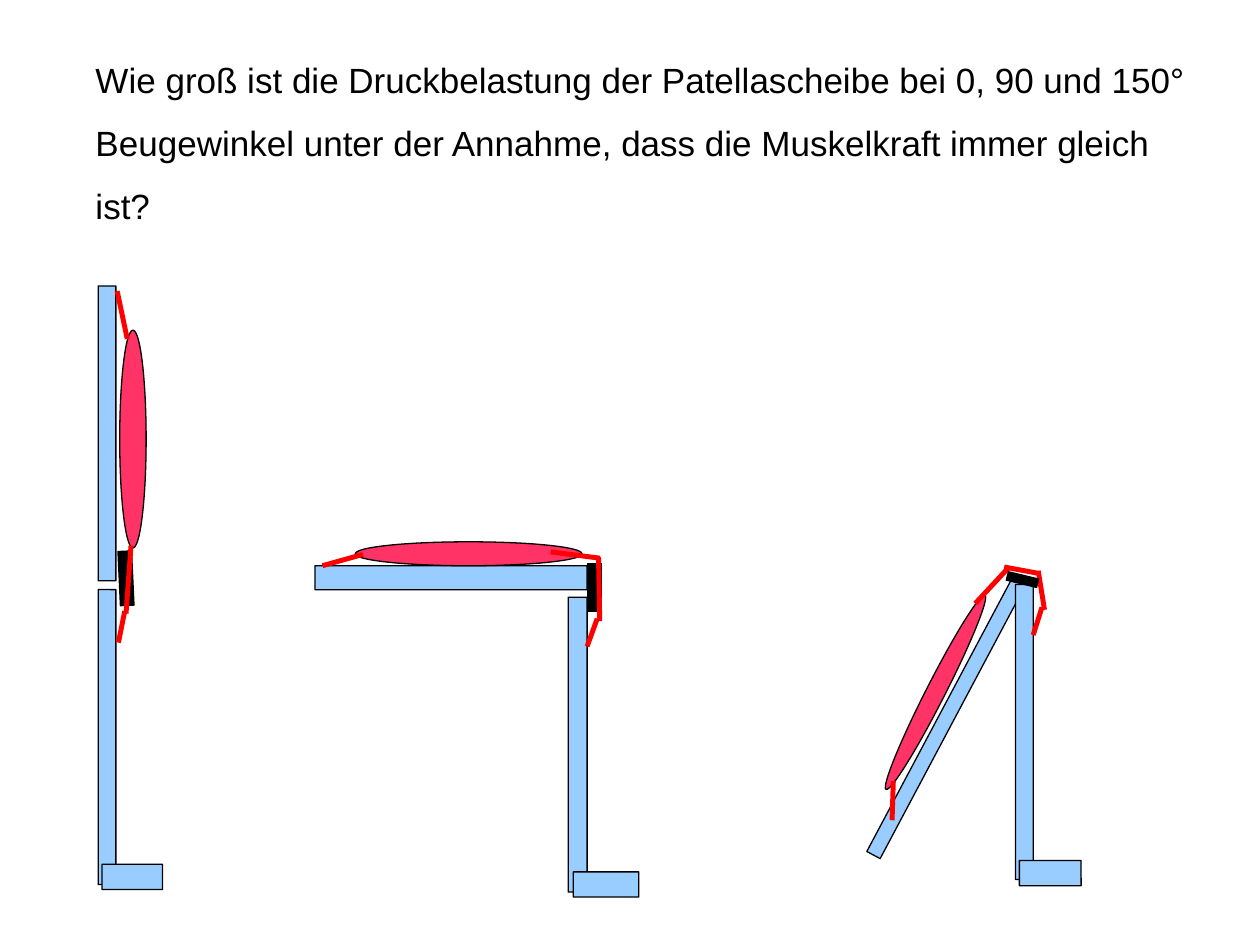
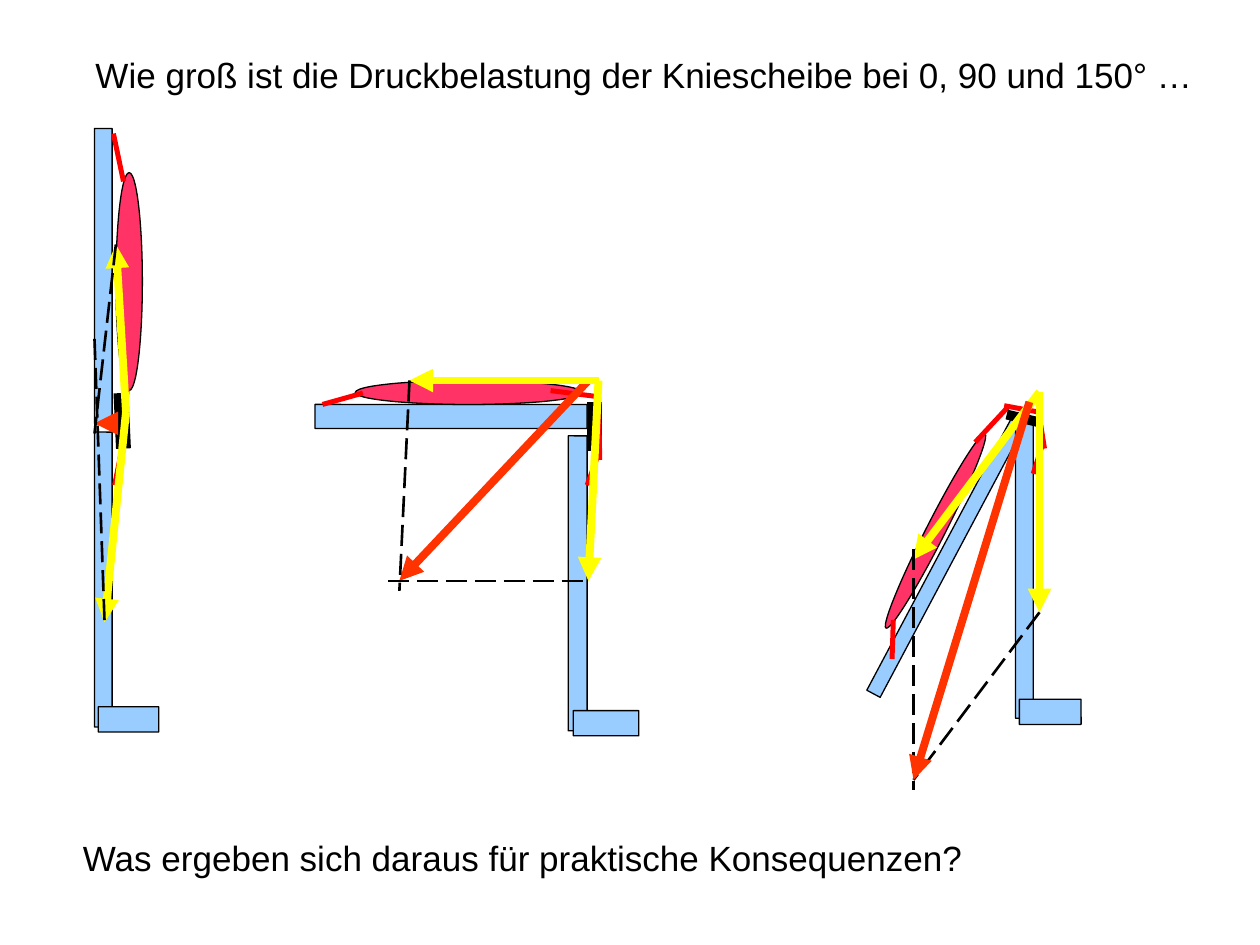
from pptx import Presentation
from pptx.dml.color import RGBColor
from pptx.enum.dml import MSO_LINE
from pptx.enum.shapes import MSO_CONNECTOR, MSO_SHAPE
from pptx.enum.text import MSO_ANCHOR, MSO_AUTO_SIZE
from pptx.oxml.ns import qn
from pptx.util import Emu, Pt
from lxml.etree import SubElement

# Content: bone and muscle as left, top, width, height, turn;
# every other part is a line as x1, y1, x2, y2
STRETCHED = [
    ("disc", 99, 437, 101, 481),
    ("bone", 78, 227, 14, 234, 0),
    ("bone", 78, 468, 14, 234, 0),
    ("bone", 81, 686, 48, 20, 0),
    ("muscle", 95, 262, 21, 173, 0),
    ("tendon", 101, 269, 93, 231),
    ("tendon", 100, 487, 104, 433),
    ("tendon", 94, 510, 99, 485),
]
RIGHT_ANGLE = [
    ("disc", 472, 447, 472, 486),
    ("bone", 250, 449, 216, 19, 0),
    ("bone", 451, 474, 15, 234, 0),
    ("bone", 455, 692, 52, 20, 0),
    ("muscle", 282, 430, 180, 19, 0),
    ("tendon", 288, 440, 256, 449),
    ("tendon", 476, 493, 475, 442),
    ("tendon", 466, 513, 474, 491),
    ("tendon", 476, 443, 437, 438),
]
BENT = [
    ("bone", 628, 564, 246, 12, 298),
    ("bone", 806, 464, 14, 234, 0),
    ("bone", 809, 683, 49, 20, 0),
    ("muscle", 735, 463, 15, 173, 207),
    ("tendon", 774, 479, 800, 451),
    ("tendon", 829, 484, 824, 453),
    ("tendon", 820, 504, 827, 482),
    ("slim disc", 824, 463, 799, 457),
    ("tendon", 824, 455, 797, 450),
    ("tendon", 708, 651, 709, 620),
]
LEGS = [STRETCHED, RIGHT_ANGLE, BENT]

# Arrows point to their second end
FORCES = [
    ("load", 83, 336, 75, 336),
    ("pull", 100, 327, 92, 194),
    ("pull", 100, 327, 83, 494),
    ("guide", 75, 269, 83, 494),
    ("load", 467, 302, 317, 461),
    ("pull", 475, 302, 325, 302),
    ("pull", 475, 302, 467, 461),
    ("pull", 825, 311, 725, 444),
    ("pull", 825, 311, 825, 486),
    ("guide", 92, 194, 75, 344),
    ("guide", 325, 302, 317, 469),
    ("guide", 308, 461, 467, 461),
    ("guide", 725, 436, 725, 627),
    ("guide", 825, 486, 725, 619),
    ("load", 817, 319, 725, 619),
]

# Each slide: texts with their boxes, one shift per leg, forces
SLIDES = [
    dict(
        texts=[("Wie groß ist die Druckbelastung der Patellascheibe bei 0, 90 und 150° "
                "Beugewinkel unter der Annahme, dass die Muskelkraft immer gleich ist?",
                (66, 25, 887, 157))],
        shifts=[(0, 0)] * 3, forces=[]),
    dict(
        texts=[("Wie groß ist die Druckbelastung der Kniescheibe bei 0, 90 und 150° …",
                (66, 21, 927, 56)),
               ("Was ergeben sich daraus für praktische Konsequenzen?",
                (56, 642, 887, 49))],
        shifts=[(-3, -125), (0, -128), (0, -128)], forces=FORCES),
]


# Theme: colours, type, line widths
class Theme:
    font, size, ink = "Arial", 20, "000000"
    edge = 0.75
    fills = {"bone": "99CCFF", "muscle": "FF3366"}
    forms = {"bone": MSO_SHAPE.ROUNDED_RECTANGLE, "muscle": MSO_SHAPE.OVAL}
    lines = {
        "disc": ("000000", 8.5),
        "slim disc": ("000000", 5.67),
        "tendon": ("FF0000", 2.83),
        "pull": ("FFFF00", 4.5),
        "load": ("FF3300", 4.5),
        "guide": ("000000", 1.5),
    }
    arrows = {"pull", "load"}
    dashed = {"guide"}


SCALE = 9144  # 100 px to the inch


def px(*nums):
    return [Emu(n * SCALE) for n in nums]


def tint(code):
    return RGBColor.from_string(code)


def write(slide, text, box, size=Theme.size, color=Theme.ink, space=1.5):
    frame = slide.shapes.add_textbox(*px(*box)).text_frame
    frame.word_wrap = True
    frame.auto_size = MSO_AUTO_SIZE.SHAPE_TO_FIT_TEXT
    frame.vertical_anchor = MSO_ANCHOR.TOP
    frame.margin_left, frame.margin_top, frame.margin_right, frame.margin_bottom = px(10, 5, 10, 0)
    para = frame.paragraphs[0]
    para.line_spacing = space
    run = para.add_run()
    run.text = text
    run.font.name = Theme.font
    run.font.size = Pt(size)
    run.font.color.rgb = tint(color)


def draw_form(shapes, kind, x, y, w, h, turn):
    form = shapes.add_shape(Theme.forms[kind], *px(x, y, w, h))
    form.shadow.inherit = False
    form.rotation = turn
    if kind == "bone":
        form.adjustments[0] = 0.01
    form.fill.solid()
    form.fill.fore_color.rgb = tint(Theme.fills[kind])
    form.line.color.rgb = tint(Theme.ink)
    form.line.width = Pt(Theme.edge)


def draw_line(shapes, kind, *ends):
    color, width = Theme.lines[kind]
    link = shapes.add_connector(MSO_CONNECTOR.STRAIGHT, *px(*ends))
    link.line.color.rgb = tint(color)
    link.line.width = Pt(width)
    if kind in Theme.dashed:
        link.line.dash_style = MSO_LINE.LONG_DASH
    props = link._element.spPr
    if kind in Theme.arrows:
        SubElement(props.find(qn("a:ln")), qn("a:tailEnd"), type="triangle")
    SubElement(props, qn("a:effectLst"))


def draw_leg(slide, parts, dx, dy):
    shapes = slide.shapes.add_group_shape().shapes
    for kind, x, y, *rest in parts:
        if kind in Theme.forms:
            draw_form(shapes, kind, x + dx, y + dy, *rest)
        else:
            draw_line(shapes, kind, x + dx, y + dy, rest[0] + dx, rest[1] + dy)


def main():
    deck = Presentation()
    deck.slide_width, deck.slide_height = px(1000, 750)
    for page in SLIDES:
        slide = deck.slides.add_slide(deck.slide_layouts[6])
        for text, box in page["texts"]:
            write(slide, text, box)
        for parts, shift in zip(LEGS, page["shifts"]):
            draw_leg(slide, parts, *shift)
        for force in page["forces"]:
            draw_line(slide.shapes, *force)
    deck.save("out.pptx")


if __name__ == "__main__":
    main()
